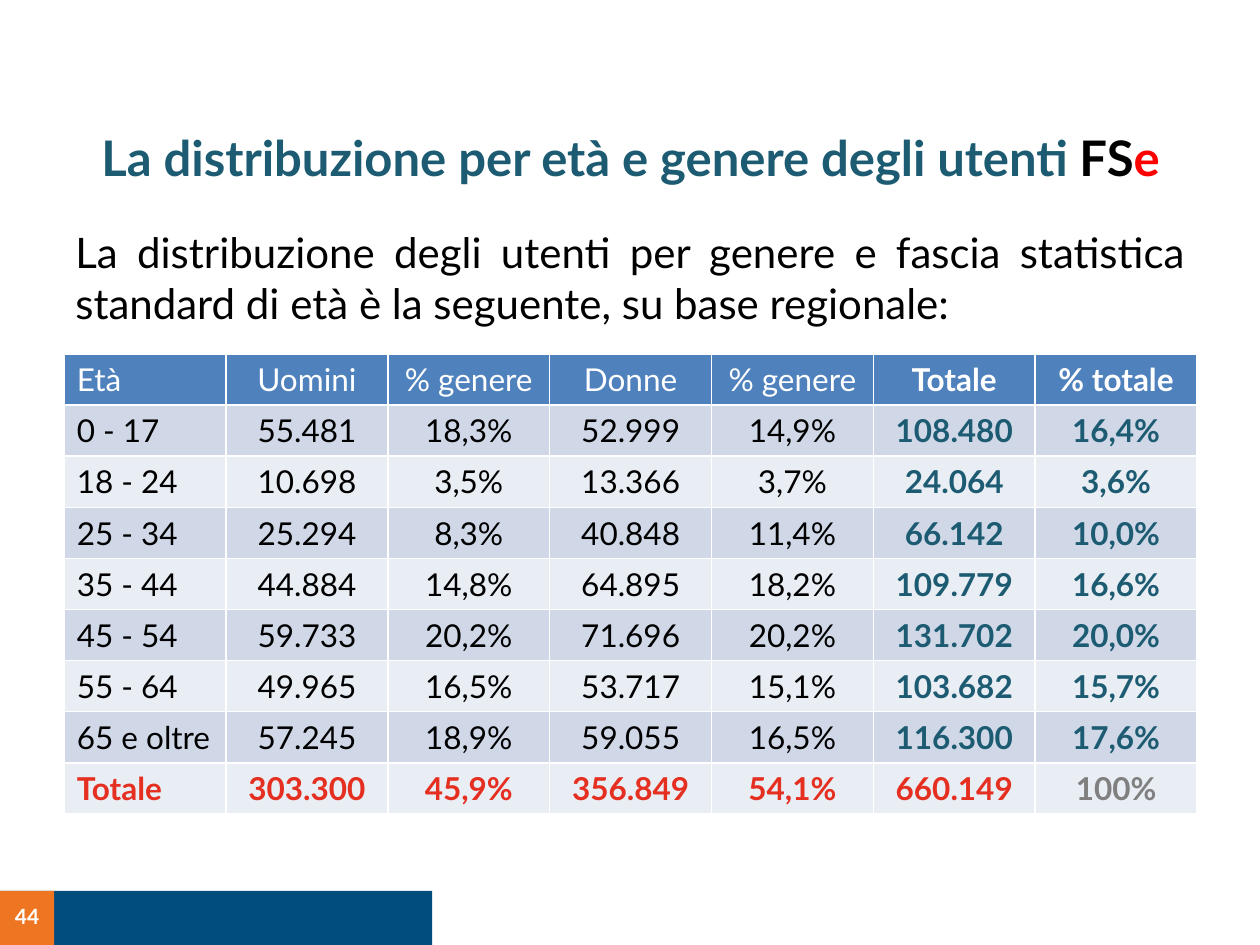
from dataclasses import dataclass

from lxml import etree
from pptx import Presentation
from pptx import util as u
from pptx.dml.color import RGBColor
from pptx.enum import shapes, text
from pptx.oxml.ns import qn


@dataclass(frozen=True)
class Theme:
    font: str = "Lato"
    teal: str = "1C5B71"
    black: str = "000000"
    white: str = "FFFFFF"
    accent: str = "FF0000"
    total: str = "E52F21"
    grey: str = "808080"
    navy: str = "014D7E"
    orange: str = "EE7622"
    header: str = "4F81BD"
    bands: tuple = ("D0D8E8", "E9EDF4")
    title_size: int = 28
    body_size: int = 24
    table_size: int = 18
    number_size: int = 12


ALIGN = text.PP_ALIGN
ANCHOR = text.MSO_ANCHOR

COLUMNS = ["Età", "Uomini", "% genere", "Donne", "% genere", "Totale", "% totale"]
AGE_GROUPS = [
    ["0 - 17", "55.481", "18,3%", "52.999", "14,9%", "108.480", "16,4%"],
    ["18 - 24", "10.698", "3,5%", "13.366", "3,7%", "24.064", "3,6%"],
    ["25 - 34", "25.294", "8,3%", "40.848", "11,4%", "66.142", "10,0%"],
    ["35 - 44", "44.884", "14,8%", "64.895", "18,2%", "109.779", "16,6%"],
    ["45 - 54", "59.733", "20,2%", "71.696", "20,2%", "131.702", "20,0%"],
    ["55 - 64", "49.965", "16,5%", "53.717", "15,1%", "103.682", "15,7%"],
    ["65 e oltre", "57.245", "18,9%", "59.055", "16,5%", "116.300", "17,6%"],
]
TOTALS = ["Totale", "303.300", "45,9%", "356.849", "54,1%", "660.149", "100%"]


class SlideBuilder:
    def __init__(self, page, theme):
        self.page = page
        self.theme = theme

    def add_span(self, para, content, size, color, bold=False):
        span = para.add_run()
        span.text = content
        formats = {"name": self.theme.font, "size": u.Pt(size), "bold": bold}
        for name, value in formats.items():
            setattr(span.font, name, value)
        span.font.color.rgb = RGBColor.from_string(color)

    def block(self, left, top, width, height, color):
        shape = self.page.shapes.add_shape(
            shapes.MSO_SHAPE.RECTANGLE, *map(u.Inches, (left, top, width, height)))
        shape.shadow.inherit = False
        shape.fill.solid()
        shape.fill.fore_color.rgb = RGBColor.from_string(color)
        shape.line.fill.background()

    def label(self, place, spans, size, align, anchor=ANCHOR.MIDDLE, bold=False, inset=0.1):
        box = self.page.shapes.add_textbox(*map(u.Inches, place))
        formats = {"word_wrap": True, "vertical_anchor": anchor,
                   "margin_left": u.Inches(inset), "margin_right": u.Inches(inset)}
        for name, value in formats.items():
            setattr(box.text_frame, name, value)
        para = box.text_frame.paragraphs[0]
        para.alignment = align
        for content, color in spans:
            self.add_span(para, content, size, color, bold)

    def borders(self, cell):
        properties = cell._tc.get_or_add_tcPr()
        for side in ("lnL", "lnR", "lnT", "lnB"):
            line = etree.SubElement(properties, qn("a:" + side), w=str(u.Pt(1)))
            fill = etree.SubElement(line, qn("a:solidFill"))
            etree.SubElement(fill, qn("a:srgbClr"), val=self.theme.white)

    def cell_style(self, row, column, last_row):
        """Return the fill, text colour and weight of one table cell."""
        theme = self.theme
        in_totals = column >= 5
        if row == 0:
            return theme.header, theme.white, in_totals
        band = theme.bands[(row - 1) % 2]
        if row == last_row:
            return band, theme.grey if column == 6 else theme.total, True
        return band, theme.teal if in_totals else theme.black, in_totals

    def table(self, left, top, width, height, rows):
        frame = self.page.shapes.add_table(
            len(rows), len(rows[0]), *map(u.Inches, (left, top, width, height)))
        for row, values in enumerate(rows):
            for column, content in enumerate(values):
                fill, color, bold = self.cell_style(row, column, len(rows) - 1)
                cell = frame.table.cell(row, column)
                cell.vertical_anchor = ANCHOR.MIDDLE
                self.borders(cell)
                cell.fill.solid()
                cell.fill.fore_color.rgb = RGBColor.from_string(fill)
                para = cell.text_frame.paragraphs[0]
                para.alignment = ALIGN.CENTER if column else ALIGN.LEFT
                self.add_span(para, content, self.theme.table_size, color, bold)


def main():
    theme = Theme()
    deck = Presentation()
    deck.slide_width, deck.slide_height = u.Inches(10), u.Inches(7.5)
    builder = SlideBuilder(deck.slides.add_slide(deck.slide_layouts[6]), theme)

    # Footer band
    builder.block(0, 7.07, 3.43, 0.43, theme.navy)
    builder.block(0, 7.07, 0.43, 0.43, theme.orange)

    # Title
    builder.label((0.51, 0.86, 8.99, 0.77),
                  [("La distribuzione per età e genere degli utenti ", theme.teal),
                   ("FS", theme.black), ("e", theme.accent)],
                  theme.title_size, ALIGN.CENTER, bold=True)

    # Introduction
    builder.label((0.5, 1.75, 9, 4.95),
                  [("La distribuzione degli utenti per genere e fascia statistica "
                    "standard di età è la seguente, su base regionale:", theme.black)],
                  theme.body_size, ALIGN.JUSTIFY, ANCHOR.TOP)

    # Page number
    builder.label((0, 7.06, 0.43, 0.43), [("44", theme.white)],
                  theme.number_size, ALIGN.CENTER, bold=True, inset=0)

    # Users by age and gender
    builder.table(0.51, 2.81, 8.99, 3.65, [COLUMNS, *AGE_GROUPS, TOTALS])

    deck.save("out.pptx")


if __name__ == "__main__":
    main()
